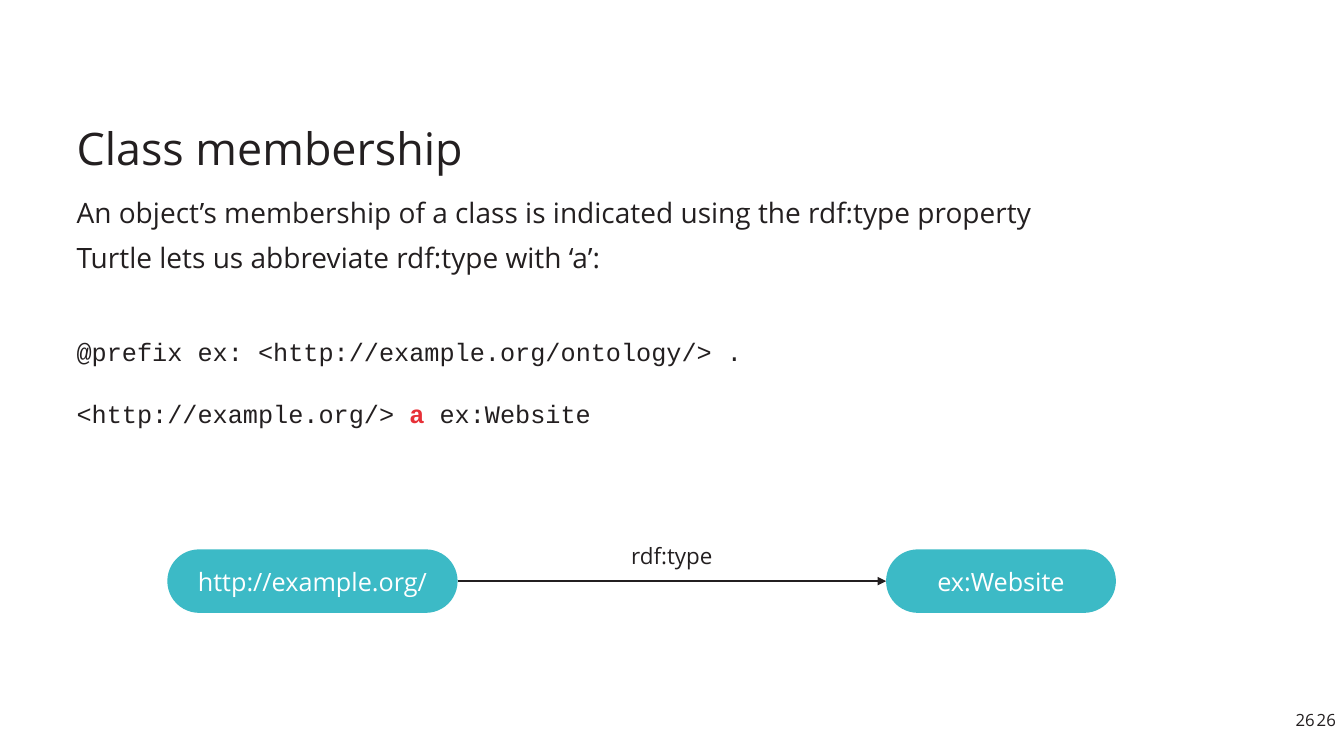
from dataclasses import dataclass

from lxml.etree import SubElement
from pptx import Presentation
from pptx.dml.color import RGBColor
from pptx.enum.shapes import MSO_CONNECTOR as Connector, MSO_SHAPE as Shape
from pptx.enum.text import MSO_ANCHOR as Anchor, MSO_AUTO_SIZE as AutoSize, PP_ALIGN as Align
from pptx.oxml.ns import qn
from pptx.util import Inches, Pt


@dataclass(frozen=True)
class Theme:
    ink: str = "231F20"
    accent: str = "E73037"
    node: str = "3CBAC6"
    paper: str = "FFFFFF"
    sans: str = "Open Sans"
    mono: str = "Courier New"
    title: int = 32
    body: int = 20
    code: int = 18
    label: int = 16
    number: int = 12
    rule: float = 1.5


class Sketch:
    """Draws themed elements on one slide, measured on a grid of 100 columns by 100 rows."""

    def __init__(self, deck, theme):
        self.theme = theme
        self.column = deck.slide_width / 100
        self.row = deck.slide_height / 100
        self.page = deck.slides.add_slide(deck.slide_layouts[1])

    def area(self, left, top, width, height):
        return (round(left * self.column), round(top * self.row),
                round(width * self.column), round(height * self.row))

    def apply(self, target, formats):
        for name, value in formats.items():
            setattr(target, name, value)

    def frame(self, shape, inset=None, **formats):
        self.apply(shape.text_frame, {"auto_size": AutoSize.NONE, "word_wrap": True, **formats})
        if inset:
            side, end = map(Inches, inset)
            self.apply(shape.text_frame, {"margin_left": side, "margin_right": side,
                                          "margin_top": end, "margin_bottom": end})
        return shape.text_frame

    def compose(self, para, spans, size, font=None, **formats):
        self.apply(para, formats)
        for text, color, bold in spans:
            span = para.add_run()
            span.text = text
            self.apply(span.font, {"name": font or self.theme.sans, "size": Pt(size), "bold": bold})
            span.font.color.rgb = RGBColor.from_string(color)

    def place(self, shape, *cells):
        self.apply(shape, dict(zip(("left", "top", "width", "height"), self.area(*cells))))

    def title(self, text, *cells):
        shape = self.page.shapes.title
        self.place(shape, *cells)
        box = self.frame(shape, (0.08, 0.04), vertical_anchor=Anchor.BOTTOM)
        self.compose(box.paragraphs[0], [(text, self.theme.ink, False)], self.theme.title,
                     alignment=Align.LEFT, line_spacing=0.9)

    def body(self, lines, *cells):
        shape = self.page.placeholders[1]
        self.place(shape, *cells)
        box = self.frame(shape, (0.08, 0.04), vertical_anchor=Anchor.TOP)
        for index, (spans, size, font, gap) in enumerate(lines):
            para = box.add_paragraph() if index else box.paragraphs[0]
            settings = para._p.get_or_add_pPr()
            settings.set("marL", "0")
            settings.set("indent", "0")
            SubElement(settings, qn("a:buNone"))
            self.compose(para, spans, size, font, alignment=Align.LEFT,
                         line_spacing=0.9, space_before=Pt(gap))

    def text(self, text, size, align, *cells, **formats):
        shape = self.page.shapes.add_textbox(*self.area(*cells))
        box = self.frame(shape, **formats)
        self.compose(box.paragraphs[0], [(text, self.theme.ink, False)], size, alignment=align)

    def node(self, text, *cells):
        shape = self.page.shapes.add_shape(Shape.ROUNDED_RECTANGLE, *self.area(*cells))
        shape.adjustments[0] = 0.5
        shape.shadow.inherit = False
        shape.fill.solid()
        shape.fill.fore_color.rgb = RGBColor.from_string(self.theme.node)
        shape.line.fill.background()
        box = self.frame(shape, word_wrap=False, vertical_anchor=Anchor.MIDDLE)
        self.compose(box.paragraphs[0], [(text, self.theme.paper, False)], self.theme.code,
                     alignment=Align.CENTER)
        return shape

    def arrow(self, start, end):
        link = self.page.shapes.add_connector(Connector.STRAIGHT, 0, 0, 0, 0)
        link.begin_connect(start, 3)
        link.end_connect(end, 1)
        link.line.width = Pt(self.theme.rule)
        link.line.color.rgb = RGBColor.from_string(self.theme.ink)
        properties = link._element.spPr
        SubElement(properties.find(qn("a:ln")), qn("a:tailEnd"), type="triangle")
        SubElement(properties, qn("a:effectLst"))


def main():
    deck = Presentation()
    deck.slide_width, deck.slide_height = Inches(13.33), Inches(7.5)
    theme = Theme()
    sketch = Sketch(deck, theme)
    ink = theme.ink

    sketch.title("Class membership", 5.1, 10.13, 89.8, 13.6)
    sketch.body([
        ([("An object’s membership of a class is indicated using the rdf:type property", ink, False)],
         theme.body, theme.sans, 0),
        ([("Turtle lets us abbreviate rdf:type with ‘a’:", ink, False)],
         theme.body, theme.sans, 10),
        ([("@prefix ex: <http://example.org/ontology/> .", ink, False)],
         theme.code, theme.mono, 47),
        ([("<http://example.org/> ", ink, False), ("a ", theme.accent, True),
          ("ex:Website", ink, False)], theme.code, theme.mono, 25),
    ], 5.1, 25.87, 89.8, 42)

    for left in (94.9, 96.47):
        sketch.text("26", theme.number, Align.RIGHT, left, 93.07, 3.53, 4.13, inset=(0.08, 0.06))

    top, height = 72.67, 8.4
    subject_left, subject_width = 12.45, 21.6
    class_left, class_width = 65.93, 17.1
    subject = sketch.node("http://example.org/", subject_left, top, subject_width, height)
    website = sketch.node("ex:Website", class_left, top, class_width, height)
    sketch.arrow(subject, website)
    label_width = 7.95
    middle = (subject_left + subject_width + class_left) / 2
    sketch.text("rdf:type", theme.label, Align.CENTER, middle - label_width / 2, 71.07,
                label_width, 4.93, word_wrap=False, vertical_anchor=Anchor.MIDDLE)

    deck.save("out.pptx")


if __name__ == "__main__":
    main()
